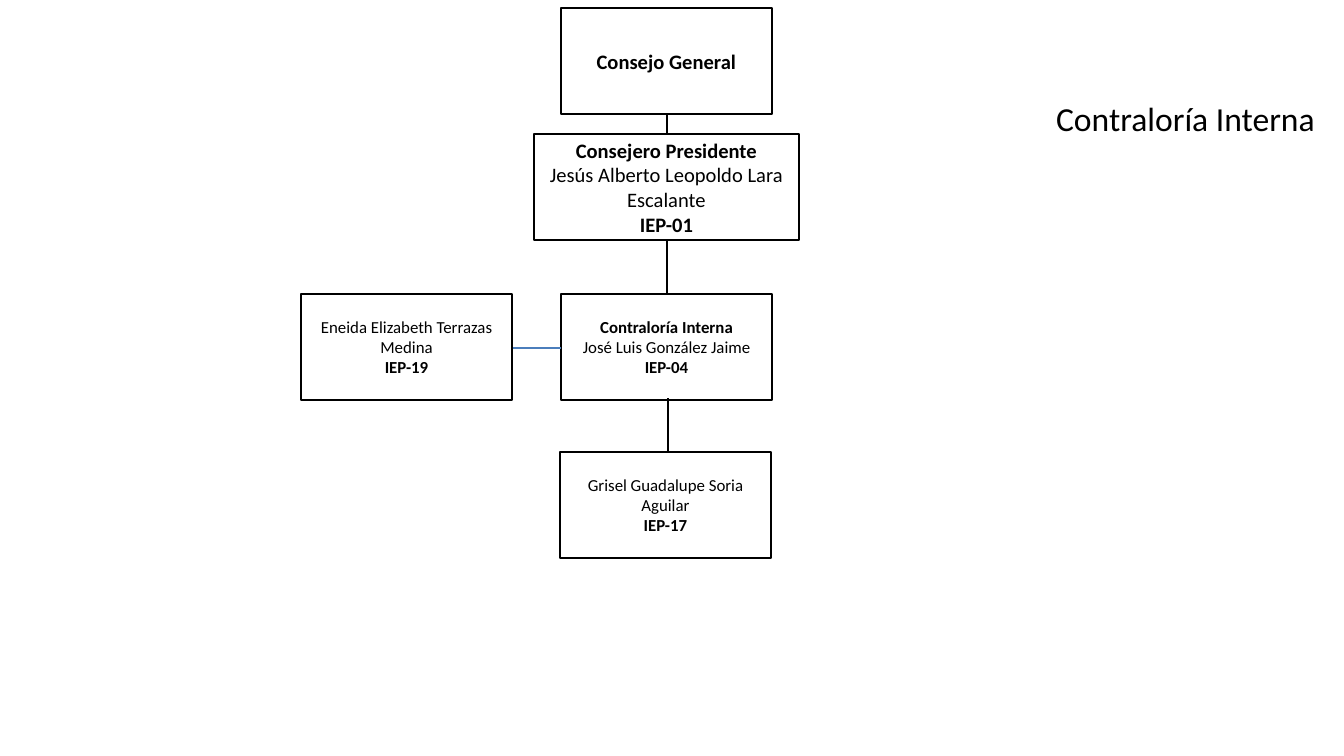
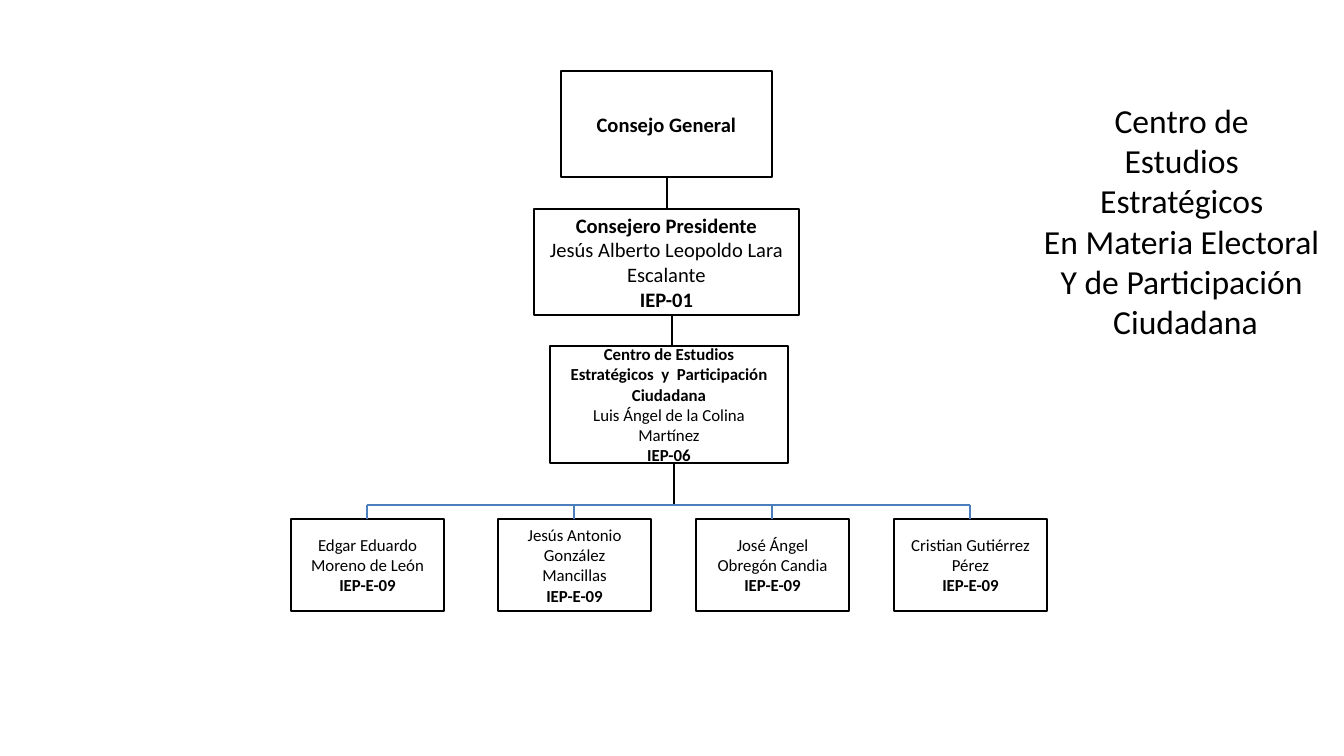
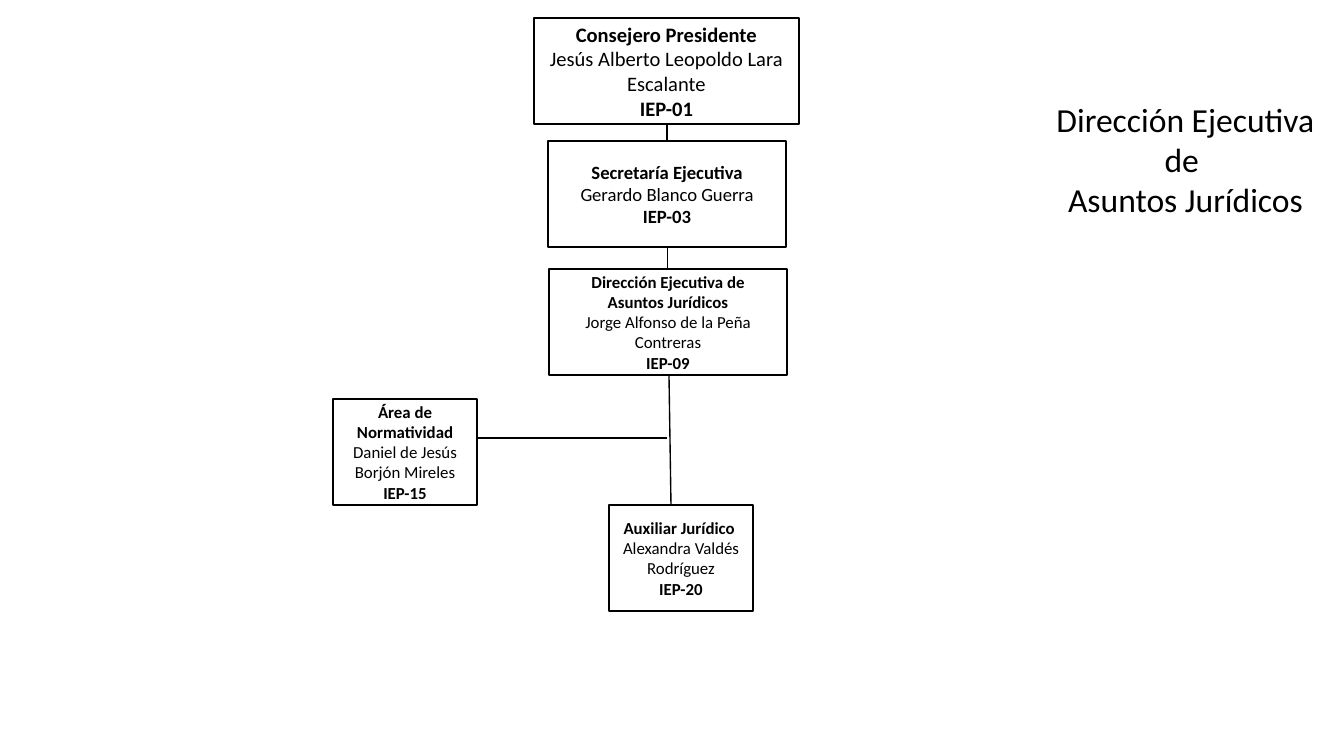
from dataclasses import dataclass

from lxml.etree import SubElement
from pptx import Presentation
from pptx.dml.color import RGBColor
from pptx.enum.shapes import MSO_CONNECTOR, MSO_SHAPE
from pptx.enum.text import MSO_ANCHOR, MSO_AUTO_SIZE, PP_ALIGN
from pptx.oxml.ns import qn
from pptx.util import Emu, Inches, Pt

PX = Inches(1) / 134.4


@dataclass(frozen=True)
class Theme:
    font: str = "Calibri"
    ink: RGBColor = RGBColor(0x00, 0x00, 0x00)
    accent: RGBColor = RGBColor(0x4B, 0x7E, 0xBC)
    title: int = 18
    council: int = 11
    office: int = 10
    staff: int = 9
    outline: float = 1
    thin: float = 0.75


THEME = Theme()
BOX_WIDTH, BOX_HEIGHT = 211, 106
WIDE_BOX = 238
NARROW_BOX = 144
AXIS = 667
COUNCIL = ("Consejo General", "", "")
PRESIDENT = ("Consejero Presidente", "Jesús Alberto Leopoldo Lara Escalante", "IEP-01")


def px(value):
    return Emu(round(value * PX))


def apply_format(target, values):
    for name, value in values.items():
        setattr(target, name, value)


def format_paragraph(paragraph, size, bold=False):
    paragraph.alignment = PP_ALIGN.CENTER
    apply_format(paragraph.font, {"name": THEME.font, "size": Pt(size), "bold": bold})
    paragraph.font.color.rgb = THEME.ink


def add_titled_slide(presentation, lines, top, height):
    slide = presentation.slides.add_slide(presentation.slide_layouts[5])
    title = slide.shapes.title
    apply_format(title, {"left": px(1027), "top": px(top),
                         "width": px(317), "height": px(height)})
    frame = title.text_frame
    frame.text = "\n".join(lines)
    apply_format(frame, {"word_wrap": False, "vertical_anchor": MSO_ANCHOR.TOP,
                         "auto_size": MSO_AUTO_SIZE.SHAPE_TO_FIT_TEXT})
    for paragraph in frame.paragraphs:
        format_paragraph(paragraph, THEME.title)
    return slide


def add_box(slide, left, top, post, size=THEME.staff, width=BOX_WIDTH, height=BOX_HEIGHT):
    shape = slide.shapes.add_shape(
        MSO_SHAPE.RECTANGLE, px(left), px(top), px(width), px(height))
    shape.shadow.inherit = False
    shape.fill.background()
    shape.line.color.rgb = THEME.ink
    shape.line.width = Pt(THEME.outline)
    role, person, code = post
    rows = [(text, bold) for text, bold in ((role, True), (person, False), (code, True)) if text]
    frame = shape.text_frame
    frame.text = "\n".join(text for text, _ in rows)
    apply_format(frame, {"word_wrap": True, "vertical_anchor": MSO_ANCHOR.MIDDLE})
    for paragraph, (_, bold) in zip(frame.paragraphs, rows):
        format_paragraph(paragraph, size, bold)


def add_president(slide, top):
    add_box(slide, 534, top, PRESIDENT, THEME.council, width=265)


def add_council(slide, top):
    add_box(slide, 561, top, COUNCIL, THEME.council)


def add_link(slide, start, end, kind=MSO_CONNECTOR.STRAIGHT, color=THEME.ink, width=THEME.thin):
    connector = slide.shapes.add_connector(kind, *map(px, (*start, *end)))
    connector.line.color.rgb = color
    connector.line.width = Pt(width)
    SubElement(connector._element.spPr, qn("a:effectLst"))


def add_elbow(slide, start, end):
    add_link(slide, start, end, MSO_CONNECTOR.ELBOW, width=THEME.outline)


def build_internal_control(presentation):
    slide = add_titled_slide(presentation, ["Contraloría Interna"], 91, 54)
    add_box(slide, 560, 452, ("", "Grisel Guadalupe Soria Aguilar", "IEP-17"))
    add_president(slide, 134)
    add_council(slide, 8)
    add_box(slide, 561, 294, ("Contraloría Interna", "José Luis González Jaime", "IEP-04"))
    add_box(slide, 301, 294, ("", "Eneida Elizabeth Terrazas Medina", "IEP-19"))
    for x, top, bottom in ((AXIS, 113, 134), (AXIS, 240, 294), (668, 398, 452)):
        add_elbow(slide, (x, top), (x, bottom))
    add_link(slide, (561, 348), (513, 348), color=THEME.accent)


def build_study_center(presentation):
    lines = ["Centro de ", "Estudios ", "Estratégicos ", "En Materia Electoral ",
             "Y de Participación ", "Ciudadana"]
    slide = add_titled_slide(presentation, lines, 93, 258)
    center = ("Centro de Estudios Estratégicos  y  Participación Ciudadana",
              "Luis Ángel de la Colina Martínez", "IEP-06")
    add_box(slide, 550, 346, center, width=WIDE_BOX, height=117)
    add_president(slide, 209)
    add_council(slide, 71)
    for x, top, bottom in ((AXIS, 177, 209), (672, 314, 346), (674, 463, 505)):
        add_elbow(slide, (x, top), (x, bottom))

    bus, staff_top, staff_width = 505, 519, 153
    staff = {291: "Edgar Eduardo Moreno de León", 498: "Jesús Antonio González Mancillas",
             696: "José Ángel Obregón Candia", 894: "Cristian Gutiérrez Pérez"}
    centers = [left + staff_width // 2 for left in staff]
    add_link(slide, (centers[0], bus), (centers[-1], bus), color=THEME.accent)
    for (left, person), x in zip(staff.items(), centers):
        add_box(slide, left, staff_top, ("", person, "IEP-E-09"), width=staff_width, height=92)
        add_link(slide, (x, bus), (x, staff_top), color=THEME.accent)


def build_legal_affairs(presentation):
    lines = ["Dirección Ejecutiva", "de ", "Asuntos Jurídicos"]
    slide = add_titled_slide(presentation, lines, 92, 136)
    add_box(slide, 549, 269, ("Dirección Ejecutiva de Asuntos Jurídicos",
                              "Jorge Alfonso de la Peña Contreras", "IEP-09"), width=WIDE_BOX)
    add_box(slide, 609, 505, ("Auxiliar Jurídico ", "Alexandra Valdés Rodríguez", "IEP-20"),
            width=NARROW_BOX)
    add_box(slide, 333, 399, ("Área de Normatividad", "Daniel de Jesús Borjón Mireles", "IEP-15"),
            width=NARROW_BOX)
    add_box(slide, 548, 141, ("Secretaría Ejecutiva", "Gerardo Blanco Guerra", "IEP-03"),
            THEME.office, width=WIDE_BOX)
    add_president(slide, 18)
    add_elbow(slide, (AXIS, 124), (AXIS, 141))
    add_elbow(slide, (AXIS, 247), (668, 269))
    add_link(slide, (669, 375), (671, 505))
    add_link(slide, (476, 438), (AXIS, 438))


def main():
    presentation = Presentation()
    apply_format(presentation, {"slide_width": px(1344), "slide_height": px(756)})
    build_internal_control(presentation)
    build_study_center(presentation)
    build_legal_affairs(presentation)
    presentation.save("out.pptx")


if __name__ == "__main__":
    main()
